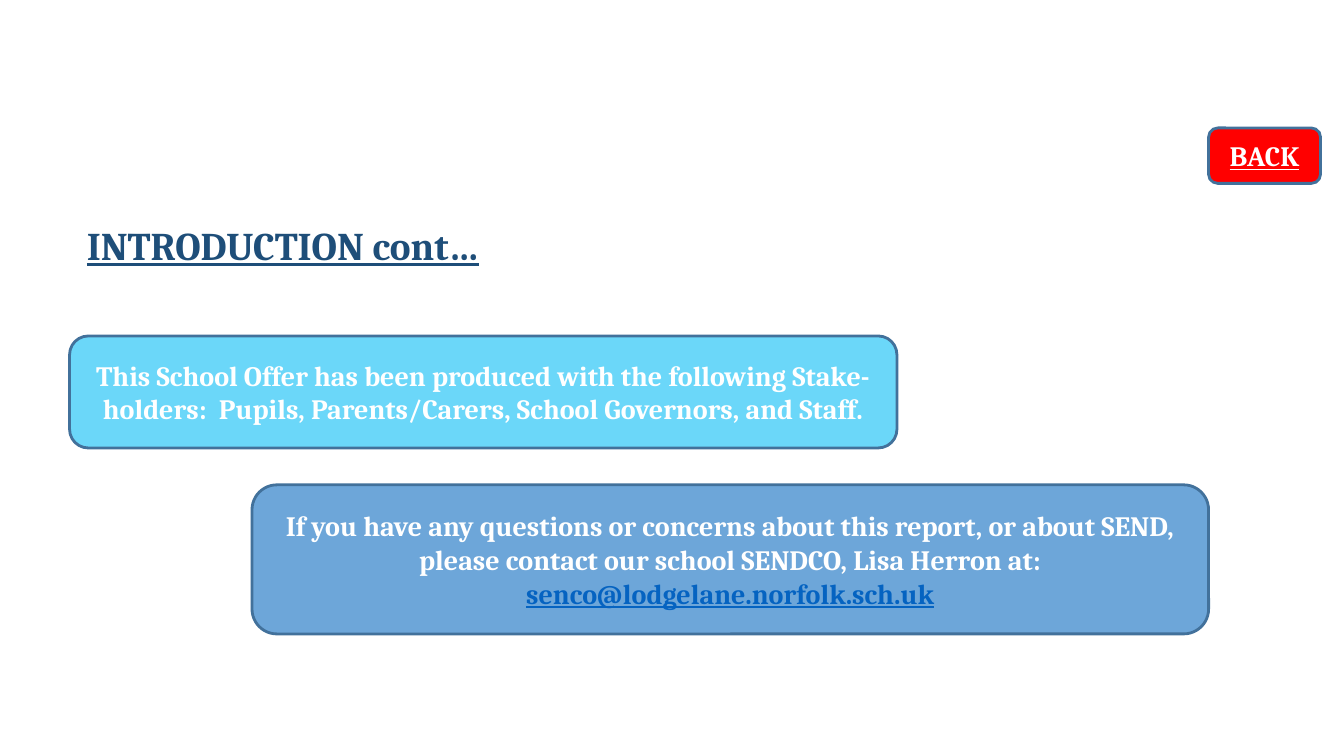
import dataclasses

import pptx
import pptx.dml.color
import pptx.enum.shapes
import pptx.enum.text
import pptx.util


@dataclasses.dataclass(frozen=True)
class Theme:
    font: str = "Cambria"
    heading_size: int = 28
    body_size: int = 20
    outline_width: int = 2
    heading: str = "1E4E79"
    white: str = "FFFFFF"
    link: str = "0563C1"
    outline: str = "42719B"
    stakeholders: str = "6BD7F9"
    contact: str = "6DA6D9"
    back: str = "FF0000"


def rgb(value):
    return pptx.dml.color.RGBColor.from_string(value)


class SlideBuilder:
    def __init__(self, slide, theme):
        self.slide = slide
        self.theme = theme

    def add_text(self, box, paragraphs, size, line_spacing=None):
        """Fill a box with one (text, colour, underline) entry per paragraph."""
        frame = box.text_frame
        frame.word_wrap = True
        frame.vertical_anchor = pptx.enum.text.MSO_ANCHOR.MIDDLE
        for index, (text, colour, underline) in enumerate(paragraphs):
            para = frame.add_paragraph() if index else frame.paragraphs[0]
            para.alignment = pptx.enum.text.PP_ALIGN.CENTER
            para.line_spacing = line_spacing
            span = para.add_run()
            span.text = text
            span.font.name = self.theme.font
            span.font.size = pptx.util.Pt(size)
            span.font.bold = True
            span.font.underline = underline
            span.font.color.rgb = rgb(colour)

    def heading(self, bounds, text):
        box = self.slide.shapes.add_textbox(*map(pptx.util.Pt, bounds))
        self.add_text(box, [(text, self.theme.heading, True)],
                      self.theme.heading_size, line_spacing=0.9)

    def panel(self, bounds, fill, paragraphs):
        box = self.slide.shapes.add_shape(
            pptx.enum.shapes.MSO_SHAPE.ROUNDED_RECTANGLE,
            *map(pptx.util.Pt, bounds))
        box.shadow.inherit = False
        box.fill.solid()
        box.fill.fore_color.rgb = rgb(fill)
        box.line.color.rgb = rgb(self.theme.outline)
        box.line.width = pptx.util.Pt(self.theme.outline_width)
        self.add_text(box, paragraphs, self.theme.body_size)


def main():
    deck = pptx.Presentation()
    deck.slide_width = pptx.util.Pt(960)
    deck.slide_height = pptx.util.Pt(540)
    theme = Theme()
    page = SlideBuilder(deck.slides.add_slide(deck.slide_layouts[6]), theme)

    # Heading
    page.heading((-3, 141, 410.5, 72), "INTRODUCTION cont…")

    # Stakeholders
    page.panel((49.7, 240, 591, 80), theme.stakeholders, [
        ("This School Offer has been produced with the following "
         "Stake-holders:  Pupils, Parents/Carers, School Governors, and Staff.",
         theme.white, False),
    ])

    # Contact details
    page.panel((180, 346.3, 683.3, 106.5), theme.contact, [
        ("If you have any questions or concerns about this report, or about "
         "SEND, please contact our school SENDCO, Lisa Herron at:",
         theme.white, False),
        ("senco@lodgelane.norfolk.sch.uk", theme.link, True),
    ])

    # Back button
    page.panel((863.3, 91.4, 80, 39.6), theme.back,
               [("BACK", theme.white, True)])

    deck.save("out.pptx")


if __name__ == "__main__":
    main()
